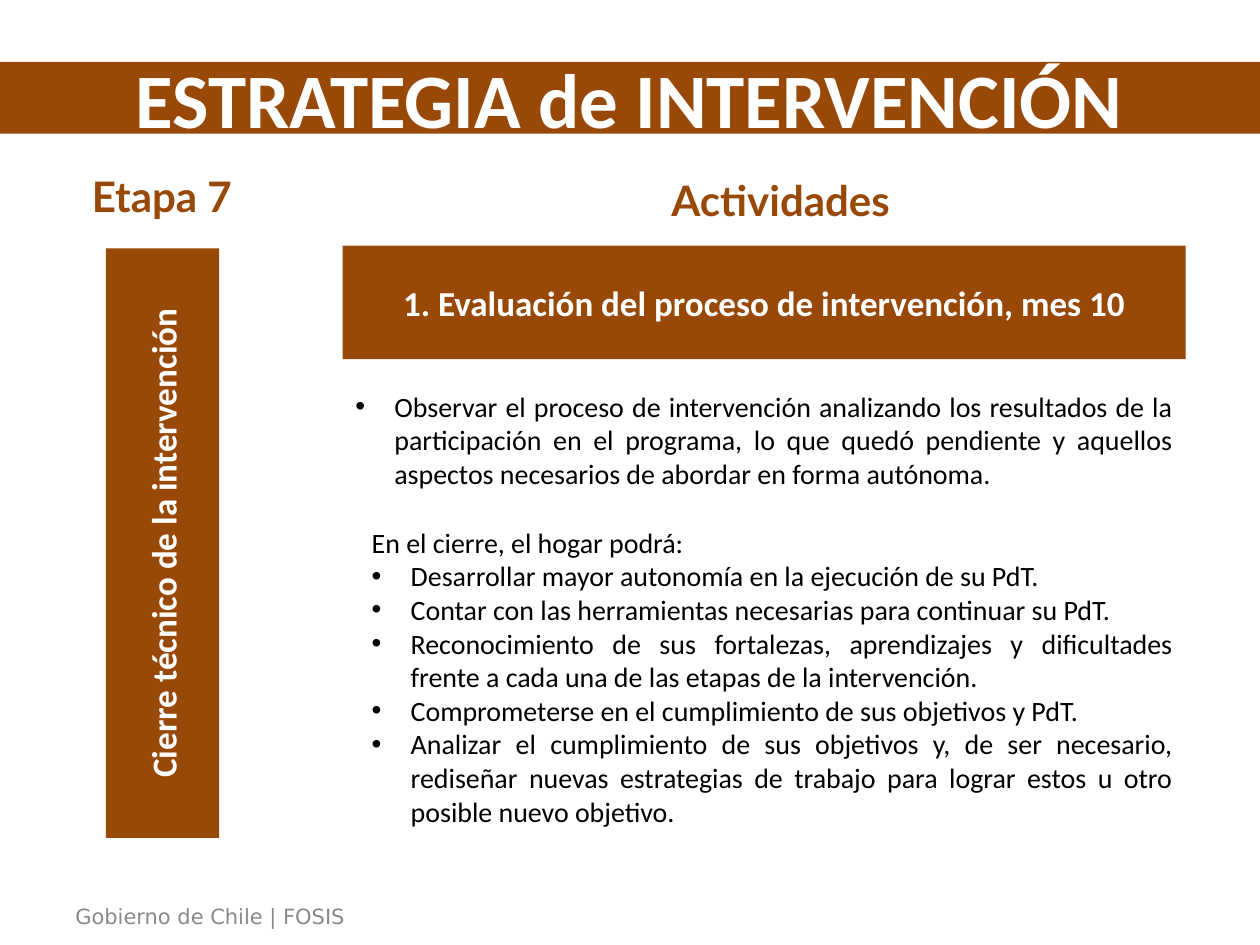
from dataclasses import dataclass

from lxml.etree import SubElement as Sub
from pptx import Presentation as Deck
from pptx.dml.color import RGBColor as Color
from pptx.enum.shapes import MSO_SHAPE as Shape
from pptx.enum.text import MSO_ANCHOR as Anchor, MSO_AUTO_SIZE as Fit, PP_ALIGN as Align
from pptx.oxml.ns import qn
from pptx.util import Inches, Pt


@dataclass(frozen=True)
class Theme:
    brown: str = "984807"
    white: str = "FFFFFF"
    black: str = "000000"
    gray: str = "898989"
    main: str = "Calibri"
    head: str = "Lato"
    foot: str = "DejaVu Sans"
    title: int = 44
    label: int = 24
    band: int = 20
    body: int = 16
    note: int = 12


@dataclass(frozen=True)
class Area:
    col: float
    row: float
    cols: float
    rows: float


@dataclass(frozen=True)
class Style:
    size: int
    color: str
    face: str
    bold: bool = True
    align: Align = Align.CENTER


@dataclass(frozen=True)
class Band:
    text: str
    area: Area
    turn: int = 0


@dataclass(frozen=True)
class Label:
    text: str
    area: Area


@dataclass(frozen=True)
class Item:
    text: str
    dot: bool = True


@dataclass(frozen=True)
class Block:
    slot: int
    area: Area
    items: tuple[Item, ...]


COLS, ROWS = 100, 75
INSET, DENT = 0.1, 0.31
LOOK = Theme()
TITLE = Style(LOOK.title, LOOK.white, LOOK.main)
BAND = Style(LOOK.band, LOOK.white, LOOK.main)
LABEL = Style(LOOK.label, LOOK.brown, LOOK.head)
BODY = Style(LOOK.body, LOOK.black, LOOK.main, False, Align.JUSTIFY)
NOTE = Style(LOOK.note, LOOK.gray, LOOK.foot, False, Align.LEFT)

BANDS = (
    Band("Cierre técnico de la intervención", Area(-10.5, 38.6, 46.8, 9), 270),
    Band("1. Evaluación del proceso de intervención, mes 10", Area(27.2, 19.5, 66.9, 9)),
)
LABELS = (
    Label("Etapa 7", Area(2.8, 13.4, 20.1, 4.3)),
    Label("Actividades", Area(28.5, 13.7, 66.9, 4.3)),
)
BLOCKS = (
    Block(1, Area(27.2, 30.4, 66.9, 9.1), (
        Item("Observar el proceso de intervención analizando los resultados de la "
             "participación en el programa, lo que quedó pendiente y aquellos "
             "aspectos necesarios de abordar en forma autónoma."),
    )),
    Block(2, Area(28.5, 41.2, 65.6, 25.2), (
        Item("En el cierre, el hogar podrá:", False),
        Item("Desarrollar mayor autonomía en la ejecución de su PdT."),
        Item("Contar con las herramientas necesarias para continuar su PdT."),
        Item("Reconocimiento de sus fortalezas, aprendizajes y dificultades "
             "frente a cada una de las etapas de la intervención."),
        Item("Comprometerse en el cumplimiento de sus objetivos y PdT."),
        Item("Analizar el cumplimiento de sus objetivos y, de ser necesario, "
             "rediseñar nuevas estrategias de trabajo para lograr estos u otro "
             "posible nuevo objetivo."),
    )),
)

deck = Deck()
deck.slide_width, deck.slide_height = Inches(10), Inches(7.5)
slide = deck.slides.add_slide(deck.slide_layouts[3])


def spot(area: Area) -> tuple[int, int, int, int]:
    wide, high = deck.slide_width / COLS, deck.slide_height / ROWS
    return (round(area.col * wide), round(area.row * high),
            round(area.cols * wide), round(area.rows * high))


def move(shape, area: Area) -> None:
    shape.left, shape.top, shape.width, shape.height = spot(area)


def paint(shape) -> None:
    shape.fill.solid()
    shape.fill.fore_color.rgb = Color.from_string(LOOK.brown)
    shape.line.fill.background()


def dress(frame, style: Style) -> None:
    frame.auto_size = Fit.NONE
    for para in frame.paragraphs:
        para.alignment = style.align
        para.space_before = Pt(0)
        for run in para.runs:
            font = run.font
            font.size, font.name, font.bold = Pt(style.size), style.face, style.bold
            font.color.rgb = Color.from_string(style.color)


def write(shape, text: str, style: Style) -> None:
    frame = shape.text_frame
    frame.text = text
    frame.word_wrap = True
    frame.vertical_anchor = Anchor.MIDDLE
    frame.margin_left = frame.margin_right = Inches(INSET)
    frame.margin_top = frame.margin_bottom = Inches(INSET)
    dress(frame, style)


def mark(para, dot: bool) -> None:
    props = para._p.get_or_add_pPr()
    dent = Inches(DENT) if dot else 0
    props.set("marL", str(dent))
    props.set("indent", str(-dent))
    if dot:
        Sub(props, qn("a:buFont"), typeface="Arial")
        Sub(props, qn("a:buChar"), char="•")
    else:
        Sub(props, qn("a:buNone"))


def draw_band(band: Band) -> None:
    shape = slide.shapes.add_shape(Shape.RECTANGLE, *spot(band.area))
    shape.shadow.inherit = False
    shape.rotation = band.turn
    paint(shape)
    write(shape, band.text, BAND)


def draw_label(label: Label) -> None:
    write(slide.shapes.add_textbox(*spot(label.area)), label.text, LABEL)


def draw_block(block: Block) -> None:
    shape = slide.placeholders[block.slot]
    move(shape, block.area)
    frame = shape.text_frame
    frame.text = "\n".join(item.text for item in block.items)
    frame.word_wrap = True
    frame.vertical_anchor = Anchor.TOP
    for para, item in zip(frame.paragraphs, block.items):
        mark(para, item.dot)
    dress(frame, BODY)


def draw_note(text: str, area: Area) -> None:
    frame = slide.shapes.add_textbox(*spot(area)).text_frame
    frame.text = text
    frame.word_wrap = False
    dress(frame, NOTE)


def main() -> None:
    title = slide.shapes.title
    move(title, Area(0, 4.9, COLS, 5.7))
    paint(title)
    write(title, "ESTRATEGIA de INTERVENCIÓN", TITLE)
    for label in LABELS:
        draw_label(label)
    for band in BANDS:
        draw_band(band)
    for block in BLOCKS:
        draw_block(block)
    draw_note("Gobierno de Chile | FOSIS", Area(5, 71.2, 24.3, 3))
    deck.save("out.pptx")


if __name__ == "__main__":
    main()
